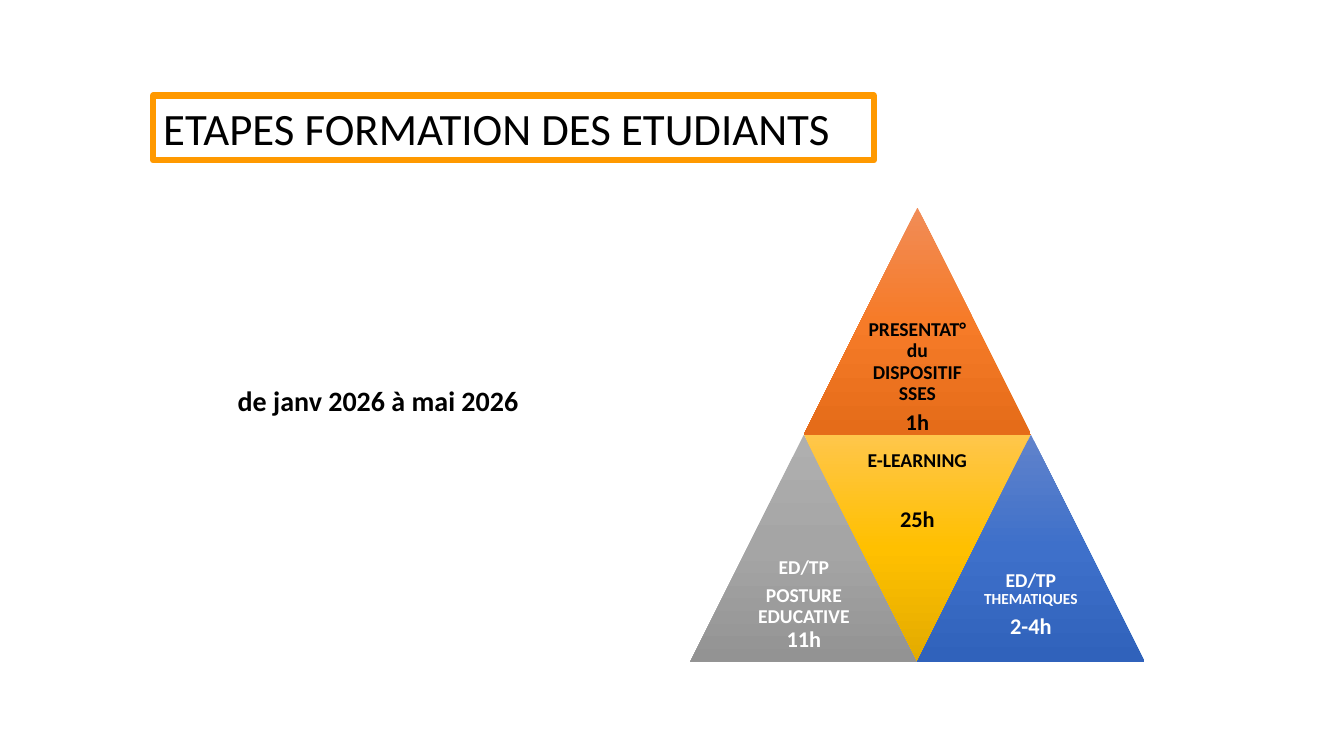
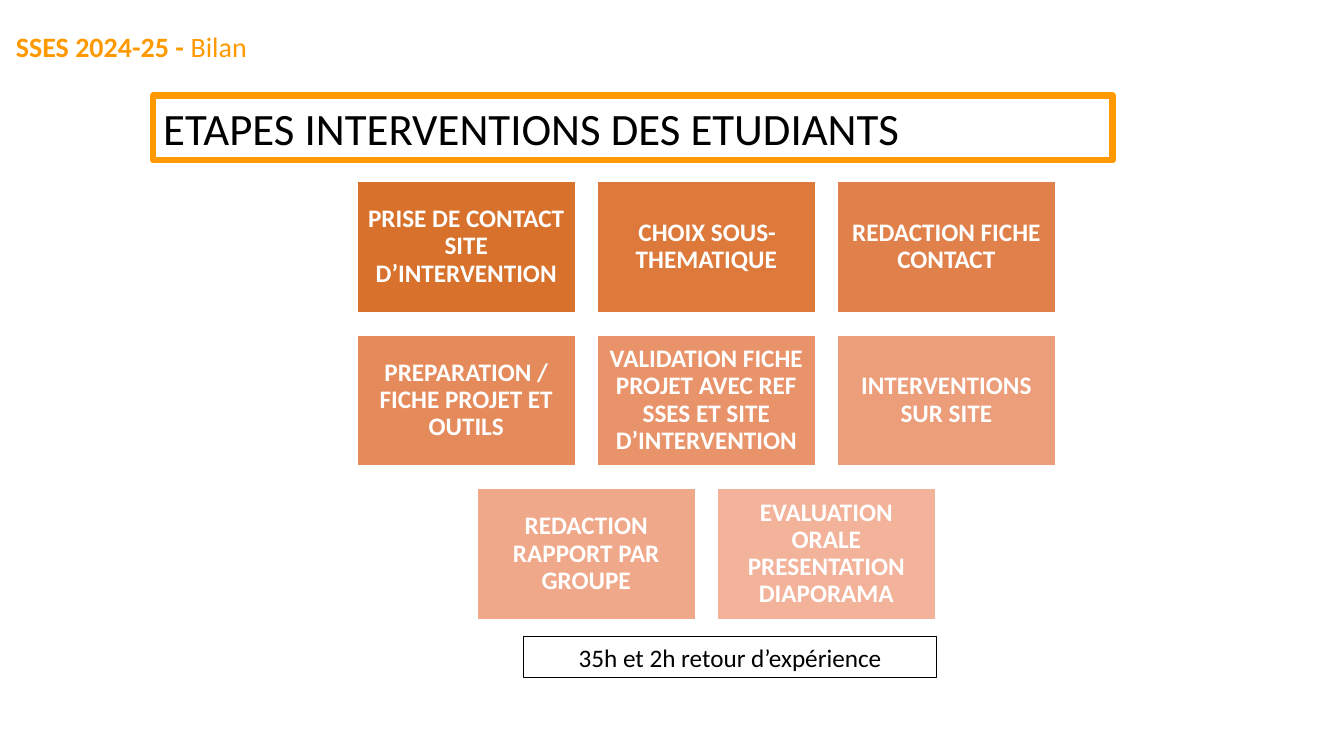
from copy import deepcopy

from pptx import Presentation
from pptx.dml.color import RGBColor
from pptx.enum.shapes import MSO_SHAPE
from pptx.enum.text import MSO_ANCHOR, MSO_AUTO_SIZE, PP_ALIGN
from pptx.oxml.ns import qn
from pptx.util import Cm, Pt

RECT = MSO_SHAPE.RECTANGLE
UP = MSO_SHAPE.ISOSCELES_TRIANGLE
DOWN = MSO_SHAPE.FLOWCHART_MERGE
LEFT, MID = PP_ALIGN.LEFT, PP_ALIGN.CENTER
TOP, CENTRE = MSO_ANCHOR.TOP, MSO_ANCHOR.MIDDLE
NO_FIT = MSO_AUTO_SIZE.NONE

FONT = "Calibri"
COLORS = {"accent": "FF9900", "black": "000000", "white": "FFFFFF"}
GRADS = {
    "orange": ("F18C57", "F67B28", "E56C19"),
    "grey": ("AFAFAF", "A5A5A5", "939393"),
    "yellow": ("FFC64B", "FFC000", "E3AB00"),
    "blue": ("6183CB", "3E70CA", "3062BB"),
}

# Pyramid: side of one triangle and outer corner, in cm
SIDE, PYR_X, PYR_Y = 5.72, 17.4, 5.23
# (column, row, shape, gradient, text colour, gap in points, paragraphs)
PARTS = [
    (0.5, 0, UP, "orange", "black", 5,
     [[("PRESENTAT° du DISPOSITIF SSES", 14)], [("1h", 16)]]),
    (0, 1, UP, "grey", "white", 5,
     [[("ED/TP", 14)], [("POSTURE EDUCATIVE ", 14), ("11h", 16)]]),
    (0.5, 1, DOWN, "yellow", "black", 26,
     [[("E-LEARNING", 14)], [("25h", 16)]]),
    (1, 1, UP, "blue", "white", 5,
     [[("ED/TP ", 14), ("THEMATIQUES", 11)], [("2-4h", 16)]]),
]

# Grid of steps, in cm
COLS, GRID_X, GRID_Y = 3, 9, 4.57
CARD_W, CARD_H, STEP_X, STEP_Y = 5.5, 3.3, 6.05, 3.87
STEPS = [
    ("PRISE DE CONTACT SITE D’INTERVENTION", "D7712C"),
    ("CHOIX SOUS-THEMATIQUE", "DC793B"),
    ("REDACTION FICHE CONTACT", "E0814B"),
    ("PREPARATION / FICHE PROJET ET OUTILS", "E58A5A"),
    ("VALIDATION FICHE PROJET AVEC REF SSES ET SITE D’INTERVENTION", "E9936A"),
    ("INTERVENTIONS SUR SITE", "EC9D7A"),
    ("REDACTION RAPPORT PAR GROUPE", "F0A88A"),
    ("EVALUATION ORALE PRESENTATION DIAPORAMA", "F3B39B"),
]


def rgb(name):
    return RGBColor.from_string(COLORS.get(name, name))


def write(shape, paras, color, align=LEFT, anchor=TOP, pad=None, gap=0,
          lead=1.0):
    """Fill a shape with paragraphs of (text, size, bold) runs."""
    frame = shape.text_frame
    frame.word_wrap = True
    frame.auto_size = NO_FIT
    frame.vertical_anchor = anchor
    if pad is not None:
        frame.margin_left = frame.margin_right = Cm(pad)
        frame.margin_top = frame.margin_bottom = Cm(pad)
    for i, runs in enumerate(paras):
        para = frame.paragraphs[0] if i == 0 else frame.add_paragraph()
        para.alignment = align
        para.line_spacing = lead
        para.space_before = Pt(gap if i else 0)
        for text, size, bold in runs:
            run = para.add_run()
            run.text = text
            run.font.name = FONT
            run.font.size = Pt(size)
            run.font.bold = bold
            run.font.color.rgb = rgb(color)


def add_shape(slide, kind, x, y, w, h):
    shape = slide.shapes.add_shape(kind, Cm(x), Cm(y), Cm(w), Cm(h))
    shape.shadow.inherit = False
    return shape


def outline(shape, color, width):
    shape.line.color.rgb = rgb(color)
    shape.line.width = Pt(width)


def add_label(slide, x, y, w, h, runs, color):
    box = slide.shapes.add_textbox(Cm(x), Cm(y), Cm(w), Cm(h))
    write(box, [runs], color)


def add_slide(prs, title, width):
    """New slide with the framed title."""
    slide = prs.slides.add_slide(prs.slide_layouts[5])
    head = slide.shapes.title
    head.left, head.top = Cm(3.86), Cm(2.41)
    head.width, head.height = Cm(width), Cm(1.63)
    outline(head, "accent", 4.5)
    line = head.line._get_or_add_ln()
    line.append(line.makeelement(qn("a:round"), {}))
    write(head, [[(title, 32, False)]], "black", anchor=CENTRE)
    return slide


def shade(shape, stops):
    """Three-stop gradient, from top to bottom."""
    shape.fill.gradient()
    shape.fill.gradient_angle = 270
    items = shape._element.spPr.find(".//" + qn("a:gsLst"))
    items.insert(1, deepcopy(items[0]))
    for i, (stop, color) in enumerate(zip(shape.fill.gradient_stops, stops)):
        stop.position = i / 2
        stop.color.rgb = rgb(color)


def add_part(slide, col, row, kind, grad, color, gap, paras):
    part = add_shape(slide, kind, PYR_X + col * SIDE, PYR_Y + row * SIDE,
                     SIDE, SIDE)
    shade(part, GRADS[grad])
    part.line.fill.background()
    bold = [[(text, size, True) for text, size in runs] for runs in paras]
    write(part, bold, color, MID, CENTRE, 0.15, gap, 0.9)


def add_cards(slide):
    """Rows of cards; a short last row is centred."""
    for i, (text, color) in enumerate(STEPS):
        row, col = divmod(i, COLS)
        count = min(COLS, len(STEPS) - row * COLS)
        x = GRID_X + (col + (COLS - count) / 2) * STEP_X
        card = add_shape(slide, RECT, x, GRID_Y + row * STEP_Y,
                         CARD_W, CARD_H)
        card.fill.solid()
        card.fill.fore_color.rgb = rgb(color)
        outline(card, "white", 1)
        write(card, [[(text, 18, True)]], "white", MID, CENTRE, 0.18,
              lead=0.9)


def main():
    prs = Presentation()
    prs.slide_width, prs.slide_height = Cm(33.87), Cm(19.05)

    # Training stages
    slide = add_slide(prs, "ETAPES FORMATION DES ETUDIANTS", 18.16)
    for part in PARTS:
        add_part(slide, *part)
    add_label(slide, 5.74, 9.55, 10.46, 2.82,
              [("de janv 2026 à mai 2026", 20, True)], "black")

    # Intervention stages
    slide = add_slide(prs, "ETAPES INTERVENTIONS DES ETUDIANTS", 24.18)
    add_label(slide, 0.15, 0.61, 7.85, 1.12,
              [("SSES 2024-25 - ", 20, True), ("Bilan", 20, False)], "accent")
    add_cards(slide)
    note = add_shape(slide, RECT, 13.2, 16.05, 10.4, 1.03)
    note.fill.background()
    outline(note, "black", 0.75)
    write(note, [[("35h et 2h retour d’expérience", 18, False)]], "black",
          MID, CENTRE)

    prs.save("out.pptx")


if __name__ == "__main__":
    main()
